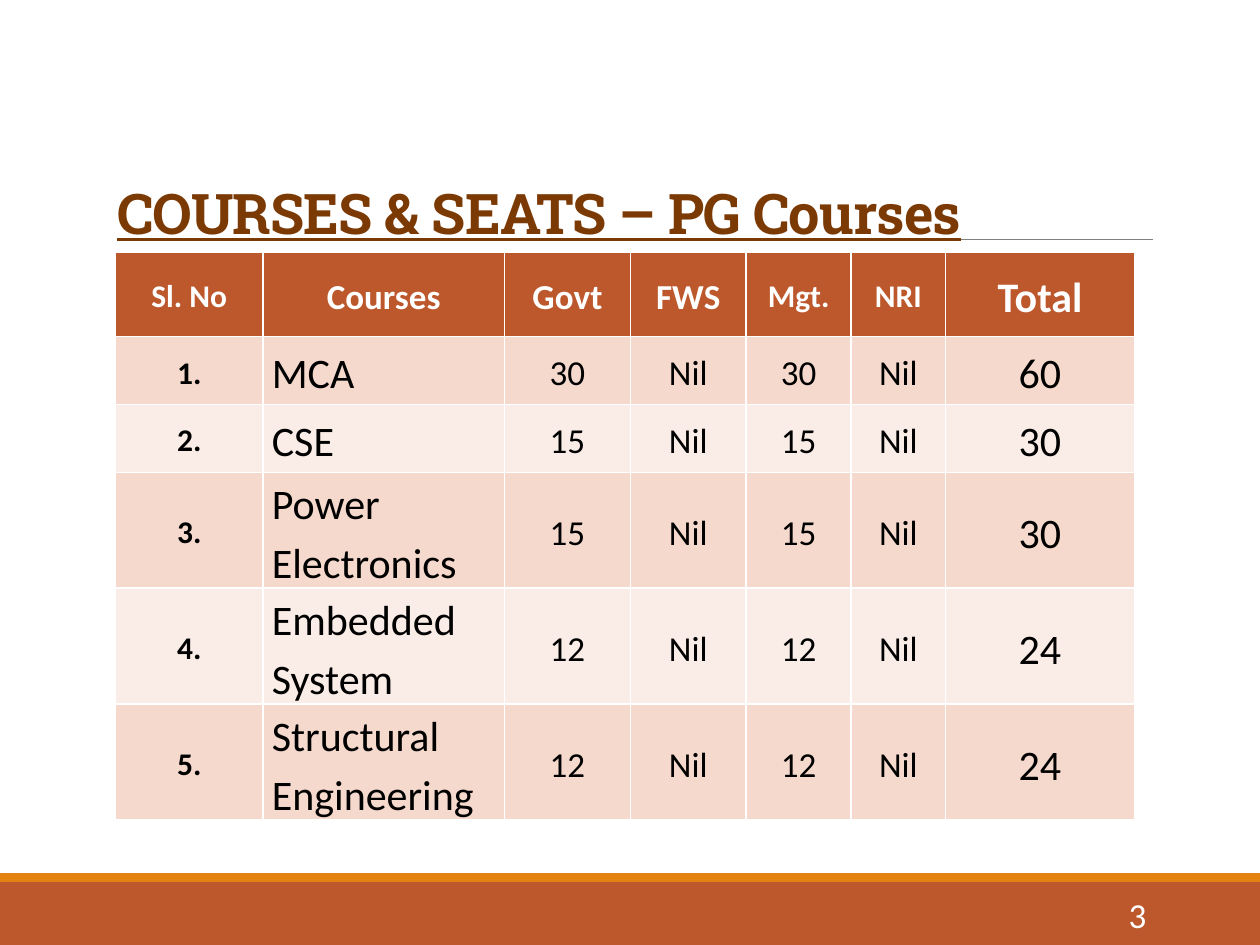
from pptx import Presentation
from pptx.dml.color import RGBColor
from pptx.enum.shapes import MSO_CONNECTOR as Link, MSO_SHAPE as Kind
from pptx.enum.text import MSO_ANCHOR as Anchor, MSO_AUTO_SIZE as Fit, PP_ALIGN as Align
from pptx.oxml.ns import qn
from pptx.util import Cm, Pt
from lxml import etree

RUST, AMBER, BROWN, GREY = "BD582C", "E48312", "7B3904", "808080"
WHITE, BLACK = "FFFFFF", "000000"
BANDS = ("F5D9CC", "FAEDE7")

HEAD = ["Sl. No", "Courses", "Govt", "FWS", "Mgt.", "NRI", "Total"]
SEATS = [
    ("MCA", 30, 60),
    ("CSE", 15, 30),
    ("Power Electronics", 15, 30),
    ("Embedded System", 12, 24),
    ("Structural Engineering", 12, 24),
]
WIDTHS = [2.97, 4.87, 2.54, 2.33, 2.12, 1.9, 3.81]
HEIGHTS = [1.7, 1.37, 1.37, 1.42, 1.37, 1.37]
HEAD_SIZES = [18, 20, 20, 20, 18, 18, 24]
BODY_SIZES = [18, 24, 20, 20, 20, 20, 24]


def rgb(code):
    return RGBColor.from_string(code)


class Deck:
    font = "Calibri"

    def __init__(self, slide):
        self.slide = slide
        self.shapes = slide.shapes

    def style(self, para, size, color, align, bold=False, font=None):
        para.alignment = align
        face = para.font
        face.name, face.size, face.bold = font or self.font, Pt(size), bold
        face.color.rgb = rgb(color)

    def bar(self, top, height, color):
        bar = self.shapes.add_shape(Kind.RECTANGLE, 0, Cm(top), Cm(25.4), Cm(height))
        bar.shadow.inherit = False
        bar.fill.solid()
        bar.fill.fore_color.rgb = rgb(color)
        bar.line.fill.background()

    def rule(self, left, right, top):
        line = self.shapes.add_connector(Link.STRAIGHT, Cm(left), Cm(top), Cm(right), Cm(top))
        line.line.color.rgb = rgb(GREY)
        line.line.width = Pt(0.5)
        etree.SubElement(line.element.spPr, qn("a:effectLst"))

    def title(self, text, left, top, width, height):
        title = self.shapes.title
        title.left, title.top = Cm(left), Cm(top)
        title.width, title.height = Cm(width), Cm(height)
        frame = title.text_frame
        frame.text = text
        frame.auto_size = Fit.NONE
        frame.vertical_anchor = Anchor.BOTTOM
        para = frame.paragraphs[0]
        self.style(para, 32, BROWN, Align.LEFT, True, "Roboto Slab")
        para.font.underline = True
        para.line_spacing = 0.85
        # Tighten the letters and lift the title above the rule
        para.runs[0].font._element.set("spc", "-50")
        title.element.getparent().append(title.element)

    def label(self, text, left, top, width, height):
        frame = self.shapes.add_textbox(Cm(left), Cm(top), Cm(width), Cm(height)).text_frame
        frame.word_wrap = True
        frame.vertical_anchor = Anchor.MIDDLE
        frame.text = text
        self.style(frame.paragraphs[0], 20, WHITE, Align.RIGHT)

    def cell(self, cell, text, fill, size, color, align, bold):
        cell.fill.solid()
        cell.fill.fore_color.rgb = rgb(fill)
        cell.vertical_anchor = Anchor.MIDDLE
        cell.margin_left = cell.margin_right = Cm(0.18)
        cell.margin_top = cell.margin_bottom = 0
        cell.text = text
        para = cell.text_frame.paragraphs[0]
        para.line_spacing = 1.15
        self.style(para, size, color, align, bold)

    def table(self, rows, left, top, height):
        frame = self.shapes.add_table(len(rows), len(WIDTHS), Cm(left), Cm(top),
                                      Cm(sum(WIDTHS)), Cm(height))
        grid = frame.table
        for col, width in zip(grid.columns, WIDTHS):
            col.width = Cm(width)
        for row, tall in zip(grid.rows, HEIGHTS):
            row.height = Cm(tall)
        frame.height = Cm(height)
        for r, row in enumerate(rows):
            head = r == 0
            fill = RUST if head else BANDS[(r - 1) % 2]
            sizes = HEAD_SIZES if head else BODY_SIZES
            for c, text in enumerate(row):
                align = Align.LEFT if c == 1 and not head else Align.CENTER
                self.cell(grid.cell(r, c), text, fill, sizes[c],
                          WHITE if head else BLACK, align, head or c == 0)


def main():
    show = Presentation()
    show.slide_width, show.slide_height = Cm(25.4), Cm(19.05)
    deck = Deck(show.slides.add_slide(show.slide_layouts[5]))

    # Footer bars and title rule
    deck.bar(17.78, 1.27, RUST)
    deck.bar(17.6, 0.18, AMBER)
    deck.rule(2.49, 23.24, 4.83)

    # Title and page number
    deck.title("COURSES & SEATS – PG Courses", 2.11, 3.51, 22.22, 1.57)
    deck.label("3", 20.62, 17.93, 2.74, 1.02)

    # Seats: the government and management shares are equal
    rows = [HEAD] + [
        [f"{n}.", name, str(share), "Nil", str(share), "Nil", str(total)]
        for n, (name, share, total) in enumerate(SEATS, 1)
    ]
    deck.table(rows, 2.33, 5.08, 11.46)

    show.save("out.pptx")


if __name__ == "__main__":
    main()
